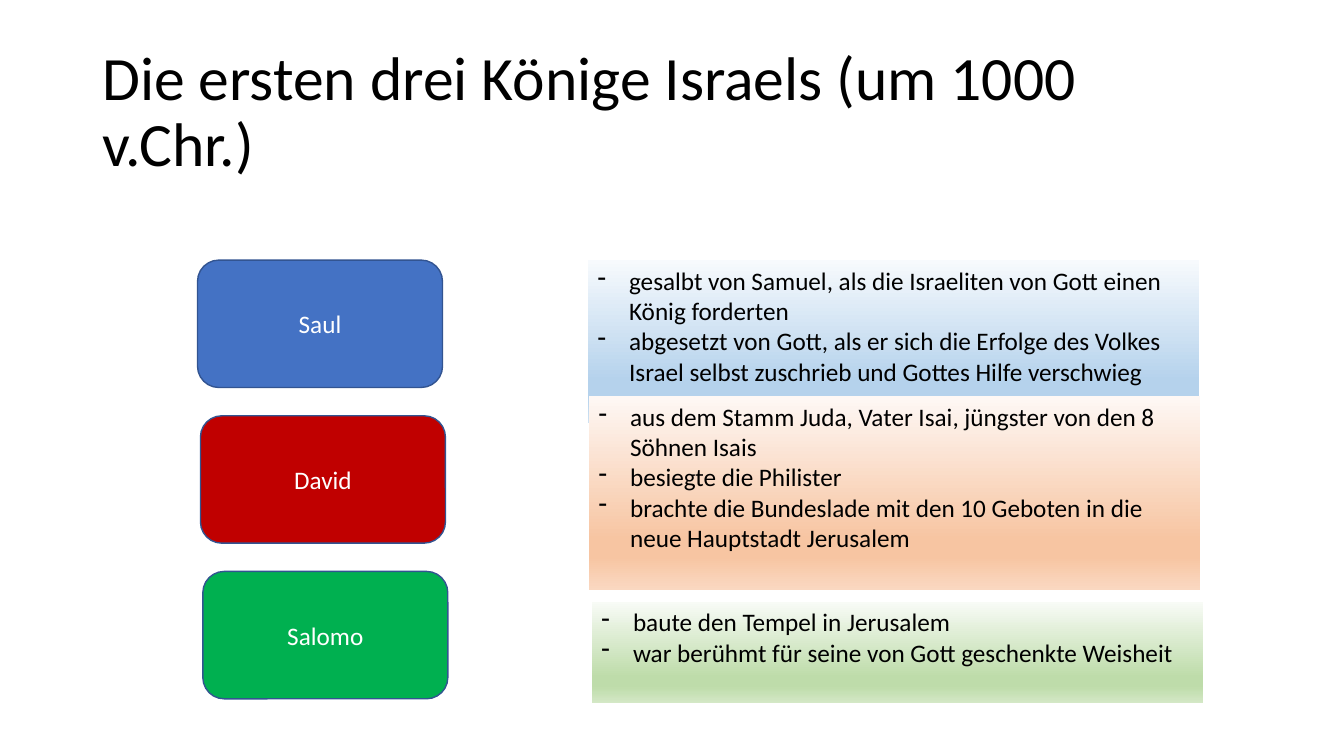
import copy

import lxml.etree
import pptx
import pptx.dml.color
import pptx.enum.shapes
import pptx.enum.text
import pptx.oxml.ns
import pptx.util

Pt = pptx.util.Pt
qn = pptx.oxml.ns.qn
SHAPES = pptx.enum.shapes.MSO_SHAPE
ANCHORS = pptx.enum.text.MSO_ANCHOR

TITLE = "Die ersten drei Könige Israels (um 1000 v.Chr.)"
STOP_POSITIONS = (0, 0.74, 0.83, 1)
NAME_TOP, NAME_STEP, NAME_SIZE = 185.8, 111.2, (175, 91)
FACTS_WIDTH = 437
BULLET_INDENT = 22.5

# name, name left, name colour, facts (left, top, height), gradient colours, facts
KINGS = [
    ("Saul", 141.1, "4472C4", (419.8, 185.8, 116.6),
     ("F7FAFD", "B5D2EC", "B5D2EC", "CEE1F2"),
     ["gesalbt von Samuel, als die Israeliten von Gott einen König forderten",
      "abgesetzt von Gott, als er sich die Erfolge des Volkes Israel selbst "
      "zuschrieb und Gottes Hilfe verschwieg"]),
    ("David", 143.2, "C00000", (420.5, 283, 138.2),
     ("FEF8F5", "F7C5A2", "F7C5A2", "FAD8C1"),
     ["aus dem Stamm Juda, Vater Isai, jüngster von den 8 Söhnen Isais",
      "besiegte die Philister",
      "brachte die Bundeslade mit den 10 Geboten in die neue Hauptstadt Jerusalem"]),
    ("Salomo", 144.9, "00B050", (422.6, 429.8, 72.7),
     ("F8FBF6", "BEDCAA", "BEDCAA", "D4E8C6"),
     ["baute den Tempel in Jerusalem",
      "war berühmt für seine von Gott geschenkte Weisheit"]),
]


def rgb(hex_colour):
    return pptx.dml.color.RGBColor.from_string(hex_colour)


def set_font(paragraph, size, colour):
    paragraph.font.name = "Calibri"
    paragraph.font.size = Pt(size)
    paragraph.font.color.rgb = rgb(colour)


def fill_gradient(shape, colours):
    """Fill from top to bottom, one colour for each stop position."""
    shape.fill.gradient()
    shape.fill.gradient_angle = 270
    stop_list = shape.fill._xPr.find(qn("a:gradFill")).find(qn("a:gsLst"))
    while len(stop_list) < len(colours):
        stop_list.append(copy.deepcopy(stop_list[0]))
    for stop, position, colour in zip(shape.fill.gradient_stops, STOP_POSITIONS, colours):
        stop.position = position
        stop.color.rgb = rgb(colour)


def add_dash(paragraph):
    properties = paragraph._p.get_or_add_pPr()
    properties.set("marL", str(Pt(BULLET_INDENT)))
    properties.set("indent", str(-Pt(BULLET_INDENT)))
    lxml.etree.SubElement(properties, qn("a:buChar")).set("char", "-")


def add_title(slide, left, top, width, height):
    frame = slide.shapes.add_textbox(Pt(left), Pt(top), Pt(width), Pt(height)).text_frame
    frame.word_wrap = True
    frame.vertical_anchor = ANCHORS.MIDDLE
    heading = frame.paragraphs[0]
    heading.text = TITLE
    heading.line_spacing = 0.9
    set_font(heading, 44, "000000")


def add_name(slide, left, top, width, height, name, colour):
    card = slide.shapes.add_shape(SHAPES.ROUNDED_RECTANGLE, Pt(left), Pt(top), Pt(width), Pt(height))
    card.shadow.inherit = False
    card.fill.solid()
    card.fill.fore_color.rgb = rgb(colour)
    card.line.color.rgb = rgb("325491")
    card.line.width = Pt(1)
    card.text_frame.vertical_anchor = ANCHORS.MIDDLE
    label = card.text_frame.paragraphs[0]
    label.text = name
    label.alignment = pptx.enum.text.PP_ALIGN.CENTER
    set_font(label, 18, "FFFFFF")


def add_facts(slide, left, top, width, height, colours, facts):
    panel = slide.shapes.add_shape(SHAPES.RECTANGLE, Pt(left), Pt(top), Pt(width), Pt(height))
    panel.shadow.inherit = False
    panel.line.fill.background()
    fill_gradient(panel, colours)
    frame = panel.text_frame
    frame.word_wrap = True
    frame.vertical_anchor = ANCHORS.TOP
    frame.text = "\n".join(facts)
    for fact in frame.paragraphs:
        fact.alignment = pptx.enum.text.PP_ALIGN.LEFT
        add_dash(fact)
        set_font(fact, 18, "000000")


def main():
    deck = pptx.Presentation()
    deck.slide_width, deck.slide_height = Pt(960), Pt(540)
    slide = deck.slides.add_slide(deck.slide_layouts[6])
    add_title(slide, 66, 28.8, 828, 104.4)
    for row, (name, left, colour, _, _, _) in enumerate(KINGS):
        add_name(slide, left, NAME_TOP + row * NAME_STEP, *NAME_SIZE, name, colour)
    for _, _, _, (left, top, height), colours, facts in KINGS:
        add_facts(slide, left, top, FACTS_WIDTH, height, colours, facts)
    deck.save("out.pptx")


if __name__ == "__main__":
    main()
